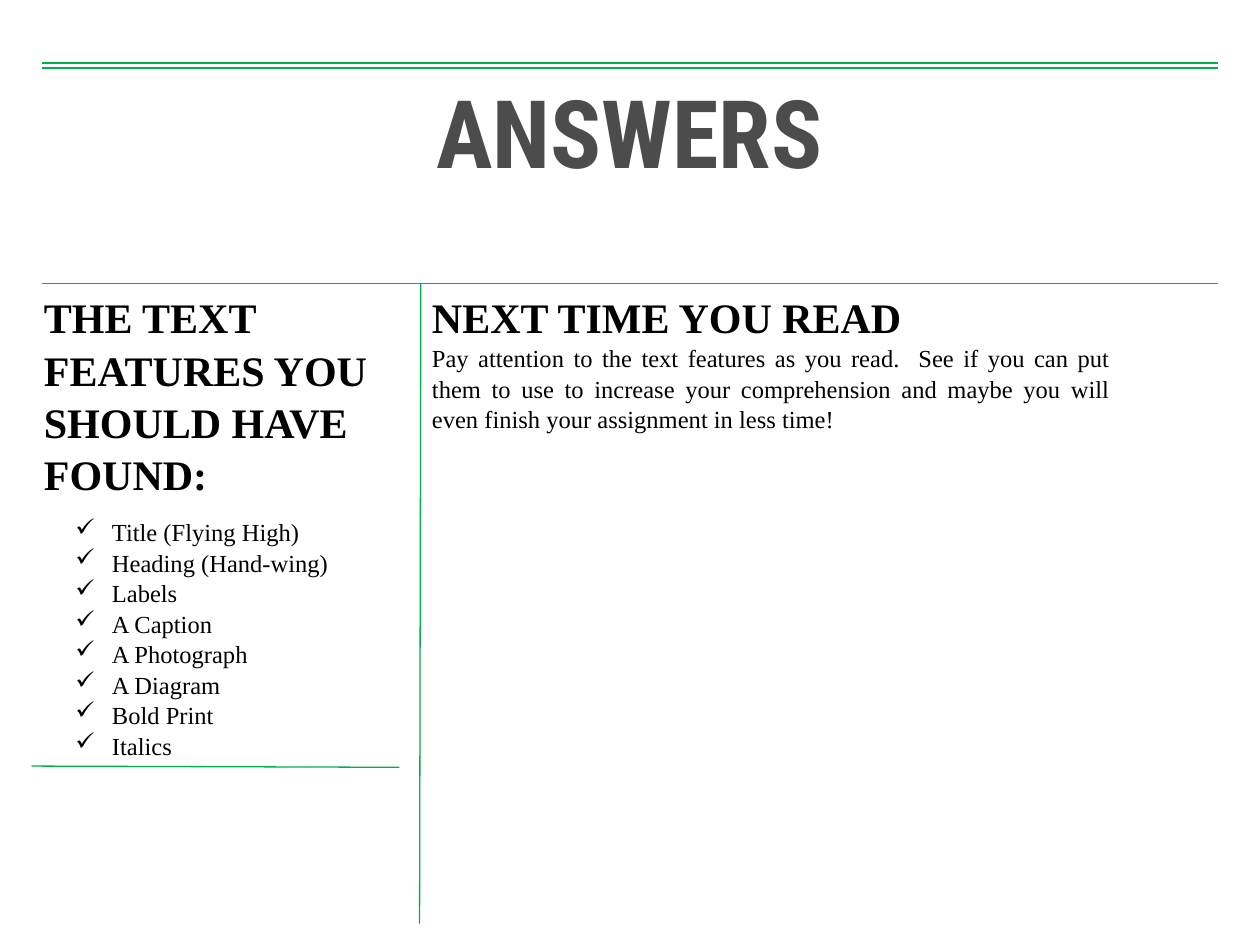
from dataclasses import dataclass
from lxml import etree
from pptx import Presentation
from pptx.dml.color import RGBColor
from pptx.enum.shapes import MSO_CONNECTOR
from pptx.enum.text import MSO_AUTO_SIZE, PP_ALIGN
from pptx.oxml.ns import qn
from pptx.util import Inches, Pt

LINE = MSO_CONNECTOR.STRAIGHT
GROW = MSO_AUTO_SIZE.SHAPE_TO_FIT_TEXT
LEFT, MID, FULL = PP_ALIGN.LEFT, PP_ALIGN.CENTER, PP_ALIGN.JUSTIFY


@dataclass(frozen=True)
class Theme:
    """Colours, fonts and type sizes of the slide."""
    green: RGBColor = RGBColor(0x00, 0xB0, 0x50)
    grey: RGBColor = RGBColor(0x4C, 0x4C, 0x4C)
    black: RGBColor = RGBColor(0, 0, 0)
    show: str = "Roboto Condensed"
    serif: str = "Times New Roman"
    title: int = 54
    head: int = 24
    body: int = 14
    lead: float = 1.04
    gap: float = 9.5


THEME = Theme()
TITLE = dict(name=THEME.show, size=Pt(THEME.title), bold=True)
HEAD = dict(name=THEME.serif, size=Pt(THEME.head), bold=True)
BODY = dict(name=THEME.serif, size=Pt(THEME.body), bold=False)

RULES = [
    (0.33, 0.5, 9.67, 0.5, 1),
    (0.33, 0.54, 9.67, 0.54, 1),
    (0.33, 2.25, 9.67, 2.25, 1),
    (3.34, 2.25, 3.33, 7.33, 0.75),
    (0.25, 6.08, 3.17, 6.09, 0.75),
]
FOUND = ["Title (Flying High)", "Heading (Hand-wing)", "Labels", "A Caption",
         "A Photograph", "A Diagram", "Bold Print", "Italics"]
ADVICE = ("Pay attention to the text features as you read.  See if you can put "
          "them to use to increase your comprehension and maybe you will even "
          "finish your assignment in less time!")


def add_rule(slide, x1, y1, x2, y2, width):
    """Draw one green rule without a shadow."""
    rule = slide.shapes.add_connector(LINE, *map(Inches, (x1, y1, x2, y2)))
    rule.line.color.rgb = THEME.green
    rule.line.width = Pt(width)
    etree.SubElement(rule._element.spPr, qn("a:effectLst"))


def add_box(slide, *place):
    """Add a wrapping text box and return its frame."""
    frame = slide.shapes.add_textbox(*map(Inches, place)).text_frame
    frame.word_wrap = True
    frame.auto_size = GROW
    return frame


def add_text(frame, text, style, color=THEME.black, align=LEFT):
    """Write one paragraph, using the empty first one if it is free."""
    first = frame.paragraphs[0]
    para = frame.add_paragraph() if first.runs else first
    para.alignment = align
    para.line_spacing = THEME.lead
    run = para.add_run()
    run.text = text
    for key, value in style.items():
        setattr(run.font, key, value)
    run.font.color.rgb = color
    return para


def add_check(para):
    """Give a paragraph a hanging check mark."""
    props = para._p.get_or_add_pPr()
    props.set("marL", str(Inches(0.54)))
    props.set("indent", str(Inches(-0.29)))
    etree.SubElement(props, qn("a:buChar")).set("char", "✓")


def main():
    """Build and save the slide."""
    deck = Presentation()
    deck.slide_width, deck.slide_height = Inches(10), Inches(7.5)
    slide = deck.slides.add_slide(deck.slide_layouts[6])
    for rule in RULES:
        add_rule(slide, *rule)

    title = add_box(slide, 0.33, 0.5, 9.33, 1.01)
    add_text(title, "ANSWERS", TITLE, THEME.grey, MID)

    left = add_box(slide, 0.25, 2.25, 3.08, 3.74)
    add_text(left, "THE TEXT FEATURES YOU SHOULD HAVE FOUND:", HEAD)
    items = [add_text(left, item, BODY) for item in FOUND]
    items[0].space_before = Pt(THEME.gap)
    for item in items:
        add_check(item)

    right = add_box(slide, 3.33, 2.25, 5.58, 2.02)
    add_text(right, "NEXT TIME YOU READ", HEAD)
    add_text(right, ADVICE, BODY, align=FULL)
    deck.save("out.pptx")


if __name__ == "__main__":
    main()
